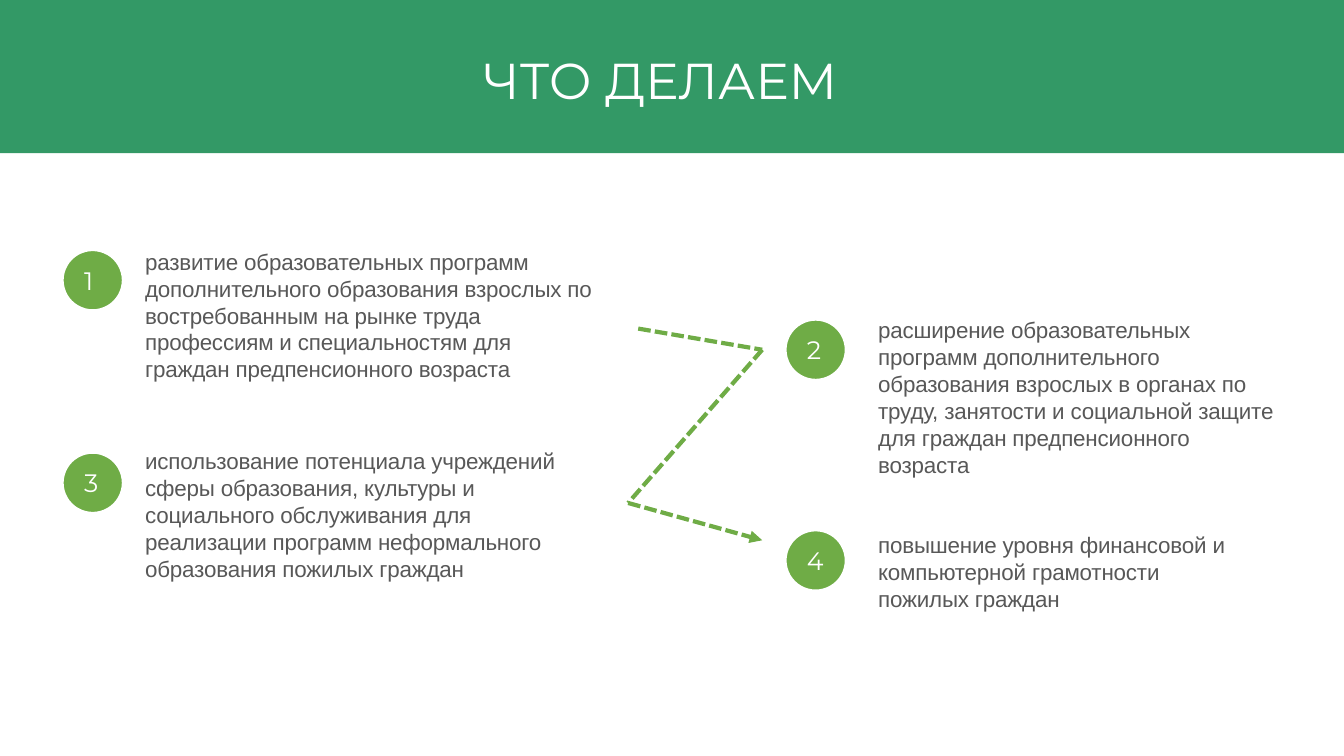
from dataclasses import dataclass

import pptx
import pptx.dml.color
import pptx.enum.dml
import pptx.enum.shapes
import pptx.enum.text
import pptx.oxml
import pptx.oxml.ns
import pptx.util

PX = 9144  # 100 px to the inch
COLORS = {"band": "339966", "accent": "6FAC46", "text": "585858", "white": "FFFFFF"}
CIRCLE = 64


@dataclass
class Step:
    number: int
    circle: tuple[int, int]
    box: tuple[int, int, int, int]
    paragraphs: list[str]


STEPS = [
    Step(1, (60, 246), (143, 245, 454, 136), [
        "развитие образовательных программ дополнительного образования взрослых по "
        "востребованным на рынке труда",
        "профессиям и специальностям для",
        "граждан предпенсионного возраста"]),
    Step(2, (777, 315), (870, 313, 402, 163), [
        "расширение образовательных программ дополнительного",
        "образования взрослых в органах по труду, занятости и социальной защите "
        "для граждан предпенсионного возраста"]),
    Step(3, (60, 447), (143, 443, 416, 136), [
        "использование потенциала учреждений сферы образования, культуры и "
        "социального обслуживания для",
        "реализации программ неформального образования пожилых граждан"]),
    Step(4, (777, 524), (870, 526, 353, 83), [
        "повышение уровня финансовой и компьютерной грамотности",
        "пожилых граждан"]),
]
ROUTE = [(633, 326), (756, 347), (623, 499), (756, 536)]


def px(*values: int) -> list[int]:
    return [v * PX for v in values]


def rgb(name: str) -> pptx.dml.color.RGBColor:
    return pptx.dml.color.RGBColor.from_string(COLORS[name])


def set_margins(tf, left: int, top: int) -> None:
    tf.margin_left, tf.margin_top = px(left, top)
    tf.margin_right = tf.margin_bottom = 0


def set_font(p, name: str, size: int, color: str) -> None:
    p.alignment = pptx.enum.text.PP_ALIGN.LEFT
    p.font.name = name
    p.font.size = pptx.util.Pt(size)
    p.font.color.rgb = rgb(color)


def add_filled(s, kind, box: tuple[int, int, int, int], color: str):
    sp = s.shapes.add_shape(kind, *px(*box))
    sp.shadow.inherit = False
    sp.fill.solid()
    sp.fill.fore_color.rgb = rgb(color)
    sp.line.fill.background()
    return sp


def set_title(s, text: str) -> None:
    sp = s.shapes.title
    sp.left, sp.top, sp.width, sp.height = px(99, 22, 1135, 147)
    tf = sp.text_frame
    tf.text = text
    tf.vertical_anchor = pptx.enum.text.MSO_ANCHOR.TOP
    set_margins(tf, 380, 27)
    set_font(tf.paragraphs[0], "Montserrat", 36, "white")


def add_route(s, points: list[tuple[int, int]]) -> None:
    """Draw a dashed path with an arrowhead at its last point."""
    for start, end in zip(points, points[1:]):
        cx = s.shapes.add_connector(
            pptx.enum.shapes.MSO_CONNECTOR.STRAIGHT, *px(*start, *end))
        cx.line.color.rgb = rgb("accent")
        cx.line.width = pptx.util.Pt(3)
        cx.line.dash_style = pptx.enum.dml.MSO_LINE.SQUARE_DOT
        if end == points[-1]:
            head = pptx.oxml.parse_xml(
                f'<a:tailEnd {pptx.oxml.ns.nsdecls("a")} type="triangle"/>')
            cx.line._get_or_add_ln().append(head)
        cx._element.spPr.append(
            pptx.oxml.parse_xml(f'<a:effectLst {pptx.oxml.ns.nsdecls("a")}/>'))


def add_step(s, step: Step) -> None:
    sp = add_filled(s, pptx.enum.shapes.MSO_SHAPE.OVAL,
                    (*step.circle, CIRCLE, CIRCLE), "accent")
    sp.line.color.rgb = rgb("white")
    sp.line.width = pptx.util.Pt(4.56)
    tf = sp.text_frame
    tf.text = str(step.number)
    tf.word_wrap = False
    tf.vertical_anchor = pptx.enum.text.MSO_ANCHOR.MIDDLE
    set_margins(tf, 14, 0)
    set_font(tf.paragraphs[0], "Montserrat", 18, "white")

    tf = s.shapes.add_textbox(*px(*step.box)).text_frame
    tf.word_wrap = True
    set_margins(tf, 1, 1)
    tf.text = "\n".join(step.paragraphs)
    tf.paragraphs[0].space_before = pptx.util.Pt(1)
    for p in tf.paragraphs:
        set_font(p, "Arial", 16, "text")
        for r in p.runs:
            r.font._element.set("spc", "-10")


def main() -> None:
    prs = pptx.Presentation()
    prs.slide_width, prs.slide_height = px(1333, 750)
    s = prs.slides.add_slide(prs.slide_layouts[5])
    band = add_filled(s, pptx.enum.shapes.MSO_SHAPE.RECTANGLE, (0, 0, 1333, 152), "band")
    s.shapes._spTree.insert(2, band._element)
    set_title(s, "ЧТО ДЕЛАЕМ")
    add_route(s, ROUTE)
    for step in STEPS:
        add_step(s, step)
    prs.save("out.pptx")


if __name__ == "__main__":
    main()
